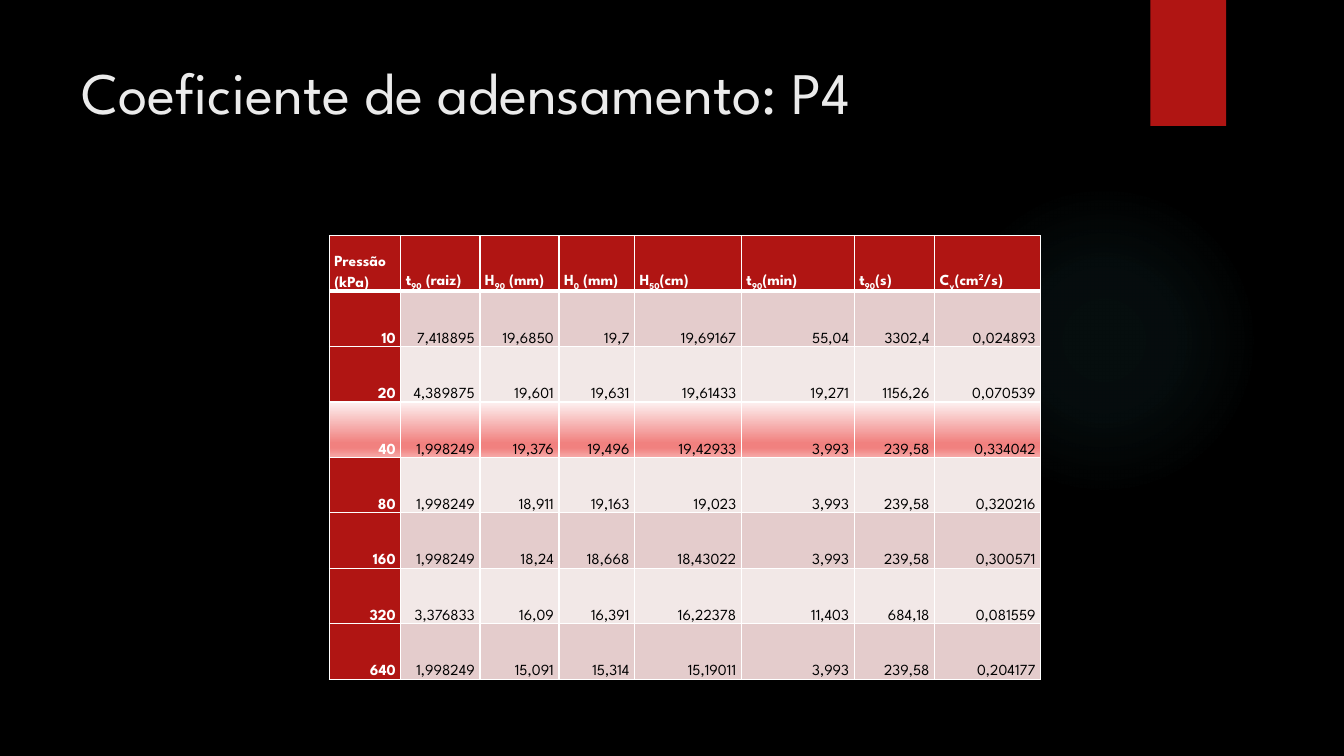
"""Build the slide with the consolidation coefficient table for P4."""
from lxml.etree import SubElement
from pptx import Presentation
from pptx.dml.color import RGBColor
from pptx.enum.shapes import MSO_SHAPE
from pptx.enum.text import MSO_ANCHOR, PP_ALIGN
from pptx.oxml import parse_xml
from pptx.oxml.ns import nsdecls, qn
from pptx.util import Pt

TITLE = "Coeficiente de adensamento: P4"
HEADERS = [
    ("Pressão (kPa)",),
    ("t", "90", " (raiz)"),
    ("H", "90", " (mm)"),
    ("H", "0", " (mm)"),
    ("H", "50", "(cm)"),
    ("t", "90", "(min)"),
    ("t", "90", "(s)"),
    ("C", "v", "(cm", "2", "/s)"),
]
ROWS = [
    ("10", "7,418895", "19,6850", "19,7", "19,69167", "55,04", "3302,4", "0,024893"),
    ("20", "4,389875", "19,601", "19,631", "19,61433", "19,271", "1156,26", "0,070539"),
    ("40", "1,998249", "19,376", "19,496", "19,42933", "3,993", "239,58", "0,334042"),
    ("80", "1,998249", "18,911", "19,163", "19,023", "3,993", "239,58", "0,320216"),
    ("160", "1,998249", "18,24", "18,668", "18,43022", "3,993", "239,58", "0,300571"),
    ("320", "3,376833", "16,09", "16,391", "16,22378", "11,403", "684,18", "0,081559"),
    ("640", "1,998249", "15,091", "15,314", "15,19011", "3,993", "239,58", "0,204177"),
]
BASELINES = (0, -25, 0, 30, 0)
COL_WIDTHS = (51, 56.5, 56.5, 54, 76.3, 80.6, 57.5, 75.8)
ROW_HEIGHT = 39.6
HIGHLIGHTED = "40"
FONT, RED, WHITE, BLACK = "League Spartan", "B01513", "FFFFFF", "000000"
BANDS = ("E4CCCC", "F2E8E7")
HIGHLIGHT_STOPS = [(0, "FDF1F1", 100), (74, "F1817F", 100), (83, "F1817F", 100), (100, "F6ABAA", 100)]
GLOW_STOPS = [(0, "50B9C1", 7), (36, "50B9C1", 6), (69, "50B9C1", 0)]
LINEAR = '<a:lin ang="5400000" scaled="0"/>'
RADIAL = '<a:path path="circle"><a:fillToRect l="50000" t="50000" r="50000" b="50000"/></a:path>'


def rgb(color):
    return RGBColor.from_string(color)


def paint(fill, color):
    fill.solid()
    fill.fore_color.rgb = rgb(color)


def paint_gradient(fill, props, stops, direction):
    fill.background()
    marks = "".join(
        f'<a:gs pos="{pos * 1000}"><a:srgbClr val="{color}"><a:alpha val="{alpha * 1000}"/></a:srgbClr></a:gs>'
        for pos, color, alpha in stops
    )
    gradient = parse_xml(f'<a:gradFill {nsdecls("a")}><a:gsLst>{marks}</a:gsLst>{direction}</a:gradFill>')
    props.replace(props.find(qn("a:noFill")), gradient)


def set_font(p, size, color, bold=False):
    p.font.name, p.font.size, p.font.bold = FONT, Pt(size), bold
    p.font.color.rgb = rgb(color)


def add_plain_shape(slide, kind, *box):
    s = slide.shapes.add_shape(kind, *map(Pt, box))
    s.line.fill.background()
    s.shadow.inherit = False
    return s


def add_backdrop(slide):
    paint(slide.background.fill, BLACK)
    glow = add_plain_shape(slide, MSO_SHAPE.OVAL, 677.5, 131.8, 221.8, 221.8)
    paint_gradient(glow.fill, glow._element.spPr, GLOW_STOPS, RADIAL)
    tab = add_plain_shape(slide, MSO_SHAPE.RECTANGLE, 821.8, 0, 54, 90)
    paint(tab.fill, RED)
    shadow = SubElement(tab._element.spPr.find(qn("a:effectLst")), qn("a:outerShdw"),
                        blurRad=str(Pt(3)), dist=str(Pt(2)), dir="5400000", rotWithShape="0")
    SubElement(SubElement(shadow, qn("a:srgbClr"), val=BLACK), qn("a:alpha"), val="45000")


def add_title(slide):
    tf = slide.shapes.add_textbox(Pt(51), Pt(36), Pt(741), Pt(110)).text_frame
    tf.word_wrap = True
    p = tf.paragraphs[0]
    p.text = TITLE
    set_font(p, 42, "EBEBEB")


def add_borders(props, row):
    widths = {"lnL": 1, "lnR": 1, "lnT": 3 if row == 1 else 1, "lnB": 3 if row == 0 else 1}
    for side, width in widths.items():
        line = SubElement(props, qn(f"a:{side}"), w=str(Pt(width)))
        SubElement(SubElement(line, qn("a:solidFill")), qn("a:srgbClr"), val=WHITE)


def fill_cell(cell, row, col, parts, highlighted):
    heading = row == 0 or col == 0
    props = cell._tc.get_or_add_tcPr()
    add_borders(props, row)
    if highlighted:
        paint_gradient(cell.fill, props, HIGHLIGHT_STOPS, LINEAR)
    else:
        paint(cell.fill, RED if heading else BANDS[(row - 1) % 2])
    cell.vertical_anchor = MSO_ANCHOR.BOTTOM
    cell.margin_left = cell.margin_right = Pt(3.6)
    cell.margin_top = cell.margin_bottom = 0
    p = cell.text_frame.paragraphs[0]
    p.alignment = PP_ALIGN.LEFT if row == 0 else PP_ALIGN.RIGHT
    p.line_spacing = 1.5
    set_font(p, 11, WHITE if heading else BLACK, heading)
    for text, baseline in zip(parts, BASELINES):
        r = p.add_run()
        r.text = text
        if baseline:
            r._r.get_or_add_rPr().set("baseline", str(baseline * 1000))


def add_results_table(slide):
    grid = [HEADERS] + [[(value,) for value in row] for row in ROWS]
    table = slide.shapes.add_table(len(grid), len(COL_WIDTHS), Pt(235.3), Pt(168.3),
                                   Pt(sum(COL_WIDTHS)), Pt(ROW_HEIGHT * len(grid))).table
    for column, width in zip(table.columns, COL_WIDTHS):
        column.width = Pt(width)
    for i, row in enumerate(grid):
        table.rows[i].height = Pt(ROW_HEIGHT)
        for j, parts in enumerate(row):
            fill_cell(table.cell(i, j), i, j, parts, row[0] == (HIGHLIGHTED,))


def main():
    prs = Presentation()
    prs.slide_width, prs.slide_height = Pt(960), Pt(540)
    slide = prs.slides.add_slide(prs.slide_layouts[6])
    add_backdrop(slide)
    add_title(slide)
    add_results_table(slide)
    prs.save("out.pptx")


if __name__ == "__main__":
    main()
